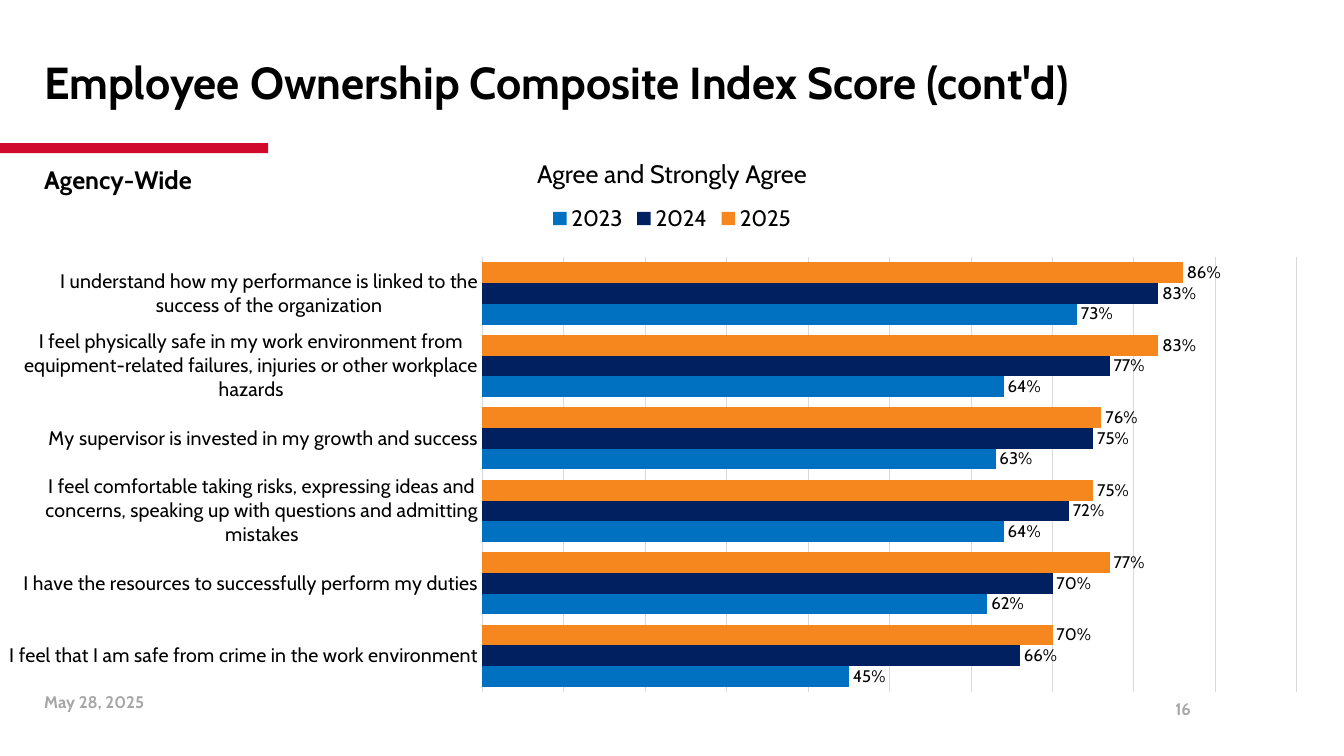
from lxml.etree import SubElement
from pptx import Presentation
from pptx.chart.data import CategoryChartData
from pptx.dml.color import RGBColor
from pptx.enum.chart import XL_CHART_TYPE, XL_LABEL_POSITION, XL_LEGEND_POSITION, XL_TICK_MARK
from pptx.enum.shapes import MSO_SHAPE
from pptx.enum.text import MSO_ANCHOR, PP_ALIGN
from pptx.oxml.ns import qn
from pptx.util import Inches, Pt

BLACK = RGBColor(0x00, 0x00, 0x00)
RED = RGBColor(0xCF, 0x0A, 0x2C)
GREY = RGBColor(0xA6, 0xA6, 0xA6)
LIGHT_GREY = RGBColor(0xD9, 0xD9, 0xD9)
ORANGE = RGBColor(0xF6, 0x87, 0x1F)
NAVY = RGBColor(0x00, 0x20, 0x60)
BLUE = RGBColor(0x00, 0x70, 0xC0)

STATEMENTS = [
    "I understand how my performance is linked to the success of the organization",
    "I feel physically safe in my work environment from equipment-related failures, "
    "injuries or other workplace hazards",
    "My supervisor is invested in my growth and success",
    "I feel comfortable taking risks, expressing ideas and concerns, "
    "speaking up with questions and admitting mistakes",
    "I have the resources to successfully perform my duties",
    "I feel that I am safe from crime in the work environment",
]
YEARS = [
    ("2025", ORANGE, [0.86, 0.83, 0.76, 0.75, 0.77, 0.70]),
    ("2024", NAVY, [0.83, 0.77, 0.75, 0.72, 0.70, 0.66]),
    ("2023", BLUE, [0.73, 0.64, 0.63, 0.64, 0.62, 0.45]),
]
PLOT_AREA = {"x": 0.359, "y": 0.121, "w": 0.606, "h": 0.825}


class SlideBuilder:
    """Holds the slide style and adds each kind of element."""

    font_name = "Cabin"

    def __init__(self, slide):
        self.slide = slide

    def style_font(self, font, size, color=BLACK, bold=False):
        font.name = self.font_name
        font.size = Pt(size)
        font.bold = bold
        font.color.rgb = color

    def style_line(self, line):
        line.color.rgb = LIGHT_GREY
        line.width = Pt(0.75)

    def add_bar(self, left, top, width, height, color):
        shape = self.slide.shapes.add_shape(
            MSO_SHAPE.RECTANGLE, Inches(left), Inches(top), Inches(width), Inches(height))
        shape.shadow.inherit = False
        shape.fill.solid()
        shape.fill.fore_color.rgb = color
        shape.line.fill.background()

    def add_text(self, text, left, top, width, height, size, color=BLACK, bold=True,
                 align=PP_ALIGN.LEFT, anchor=MSO_ANCHOR.TOP, wrap=True,
                 line_spacing=1.0, space_after=0):
        shape = self.slide.shapes.add_textbox(
            Inches(left), Inches(top), Inches(width), Inches(height))
        frame = shape.text_frame
        frame.word_wrap = wrap
        frame.vertical_anchor = anchor
        paragraph = frame.paragraphs[0]
        paragraph.alignment = align
        paragraph.line_spacing = line_spacing
        paragraph.space_after = Pt(space_after)
        run = paragraph.add_run()
        run.text = text
        self.style_font(run.font, size, color, bold)

    def add_bar_chart(self, categories, series_rows, left, top, width, height):
        data = CategoryChartData(number_format="0%")
        data.categories = categories
        for name, _, values in series_rows:
            data.add_series(name, values)
        chart = self.slide.shapes.add_chart(
            XL_CHART_TYPE.BAR_CLUSTERED, Inches(left), Inches(top),
            Inches(width), Inches(height), data).chart
        chart.has_title = False
        self.style_font(chart.font, 12)
        self.style_axes(chart)
        self.style_series(chart.plots[0], series_rows)
        chart.has_legend = True
        chart.legend.position = XL_LEGEND_POSITION.TOP
        chart.legend.include_in_layout = False
        self.style_font(chart.legend.font, 16)
        self.place_plot(chart)

    def style_axes(self, chart):
        category_axis = chart.category_axis
        category_axis.reverse_order = True
        category_axis.major_tick_mark = XL_TICK_MARK.NONE
        category_axis.minor_tick_mark = XL_TICK_MARK.NONE
        self.style_line(category_axis.format.line)
        self.style_font(category_axis.tick_labels.font, 14)
        value_axis = chart.value_axis
        value_axis.minimum_scale = 0
        value_axis.maximum_scale = 1
        value_axis.major_unit = 0.1
        value_axis.has_major_gridlines = True
        self.style_line(value_axis.major_gridlines.format.line)
        value_axis.visible = False

    def style_series(self, plot, series_rows):
        plot.gap_width = 50
        plot.overlap = 0
        plot.vary_by_categories = False
        for series, (_, color, _) in zip(plot.series, series_rows):
            series.format.fill.solid()
            series.format.fill.fore_color.rgb = color
            labels = series.data_labels
            labels.show_value = True
            labels.position = XL_LABEL_POSITION.OUTSIDE_END
            labels.number_format = "0%"
            labels.number_format_is_linked = False
            self.style_font(labels.font, 12)

    def place_plot(self, chart):
        plot_area = chart.element.find(".//" + qn("c:plotArea"))
        for layout in plot_area.findall(qn("c:layout")):
            plot_area.remove(layout)
        layout = SubElement(plot_area, qn("c:layout"))
        plot_area.insert(0, layout)
        manual = SubElement(layout, qn("c:manualLayout"))
        settings = {"layoutTarget": "inner", "xMode": "edge", "yMode": "edge", **PLOT_AREA}
        for name, value in settings.items():
            SubElement(manual, qn("c:" + name)).set("val", str(value))


def main():
    presentation = Presentation()
    presentation.slide_width = Inches(13.33)
    presentation.slide_height = Inches(7.5)
    builder = SlideBuilder(presentation.slides.add_slide(presentation.slide_layouts[6]))
    builder.add_bar(0, 1.42, 2.66, 0.1, RED)
    builder.add_text("Employee Ownership Composite Index Score (cont'd)",
                     0.34, 0.23, 12.72, 1.23, 32, anchor=MSO_ANCHOR.MIDDLE, line_spacing=0.9)
    builder.add_text("Agree and Strongly Agree", 0, 1.52, 13.33, 0.4, 18,
                     bold=False, align=PP_ALIGN.CENTER)
    builder.add_bar_chart(STATEMENTS, YEARS, 0, 1.92, 13.33, 5.23)
    builder.add_text("Agency-Wide", 0.34, 1.58, 1.88, 0.4, 18, wrap=False)
    builder.add_text("16", 8.91, 6.83, 3, 0.4, 12, GREY, align=PP_ALIGN.RIGHT,
                     anchor=MSO_ANCHOR.MIDDLE, space_after=6)
    builder.add_text("May 28, 2025", 0.34, 6.81, 3.07, 0.4, 12, GREY, space_after=12)
    presentation.save("out.pptx")


if __name__ == "__main__":
    main()
